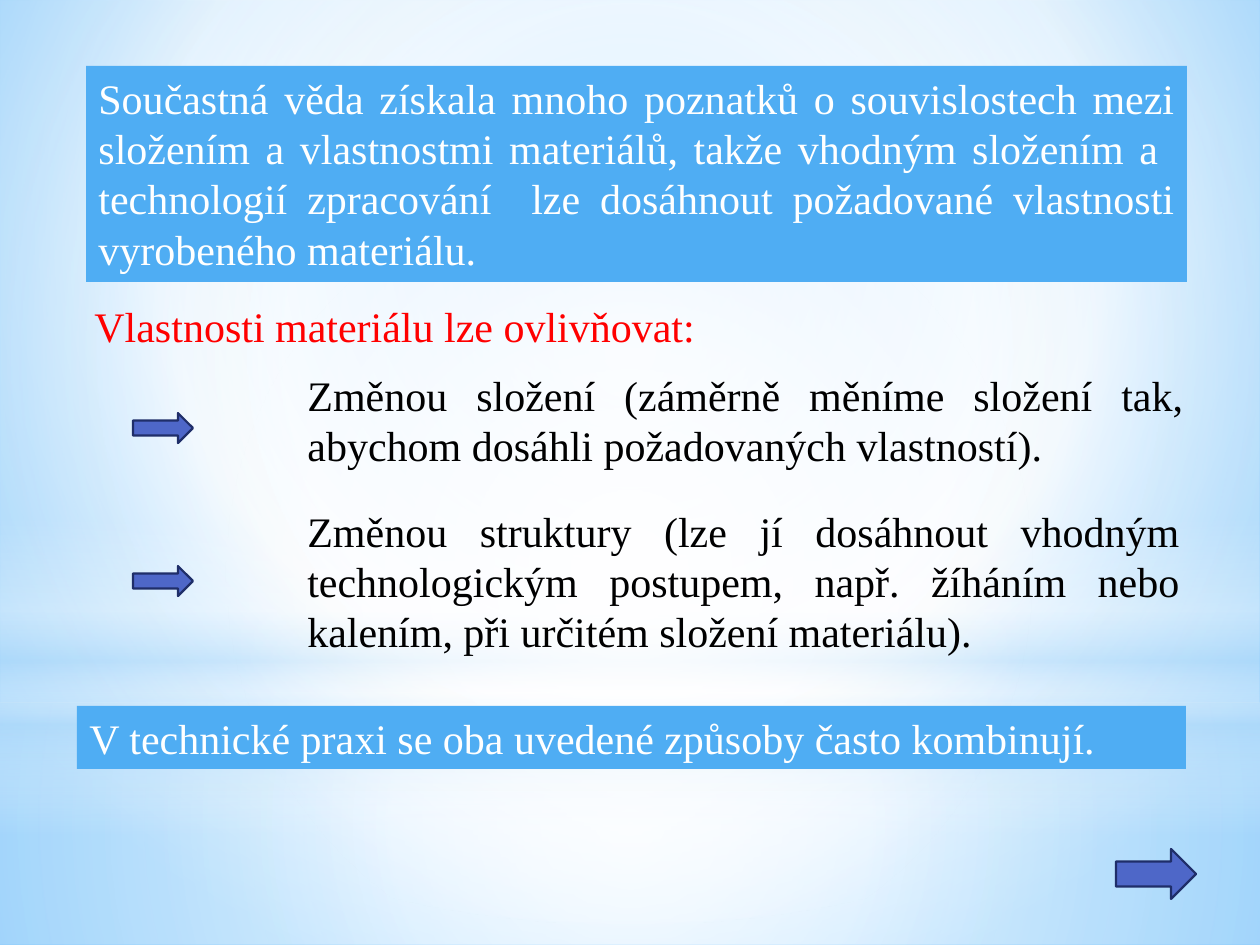
from lxml import etree
from pptx import Presentation
from pptx.dml.color import RGBColor
from pptx.enum.shapes import MSO_SHAPE
from pptx.enum.text import PP_ALIGN
from pptx.oxml.ns import qn
from pptx.util import Emu, Pt

PX = 914400 / 126
SLIDE_WIDTH, SLIDE_HEIGHT = 1260, 945
FONT = "Times New Roman"
RECTANGLE, OVAL = MSO_SHAPE.RECTANGLE, MSO_SHAPE.OVAL
ARROW = MSO_SHAPE.RIGHT_ARROW
LEFT, JUSTIFY = PP_ALIGN.LEFT, PP_ALIGN.JUSTIFY
COLORS = {
    "white": "FFFFFF", "black": "000000", "red": "FF0000",
    "banner": "4FADF3", "arrow": "4E67C8", "arrow_line": "1F2E69",
    "sky": "9ED5FF", "deep_sky": "5BB9FF", "haze": "B4DCFA",
}
CENTER = (50, 50, 50, 50)
# Gradient stops are (position %, color, opacity %).
SKY_STOPS = [(0, "sky", 100), (60, "white", 100), (100, "deep_sky", 100)]
HAZE_LAYERS = [
    (RECTANGLE, (0, 703, 1260, 242),
     [(0, "white", 91), (37, "white", 76), (100, "haze", 79)], CENTER),
    (RECTANGLE, (0, 0, 1260, 703),
     [(0, "white", 89), (48, "white", 62), (100, "haze", 79)], CENTER),
    (RECTANGLE, (0, 519, 1260, 315),
     [(0, "white", 0), (29, "white", 30), (45, "haze", 40),
      (55, "white", 26), (65, "haze", 60), (100, "white", 0)], None),
    (OVAL, (0, 221, 1260, 703), [(0, "white", 100), (56, "white", 0)], CENTER),
]
INTRO = ("Součastná věda získala mnoho poznatků o souvislostech mezi složením "
         "a vlastnostmi materiálů, takže vhodným složením a  technologií "
         "zpracování  lze dosáhnout požadované vlastnosti vyrobeného materiálu.")
HEADING = "Vlastnosti materiálu lze ovlivňovat:"
METHODS = [
    ((133, 363, 1063, 115), 50,
     "Změnou složení (záměrně měníme složení tak, abychom dosáhli "
     "požadovaných vlastností)."),
    ((133, 499, 1059, 165), 67,
     "Změnou struktury (lze jí dosáhnout vhodným technologickým postupem, "
     "např. žíháním nebo kalením, při určitém složení materiálu)."),
]
CONCLUSION = "V technické praxi se oba uvedené způsoby často kombinují."


def emu(box):
    return [Emu(round(length * PX)) for length in box]


def rgb(name):
    return RGBColor.from_string(COLORS[name])


def gradient(stops, focus):
    """Return a circular gradient around focus, or a vertical one without it."""
    fill = etree.Element(qn("a:gradFill"), rotWithShape="1")
    stop_list = etree.SubElement(fill, qn("a:gsLst"))
    for position, color, opacity in stops:
        stop = etree.SubElement(stop_list, qn("a:gs"), pos=str(position * 1000))
        value = etree.SubElement(stop, qn("a:srgbClr"), val=COLORS[color])
        if opacity < 100:
            etree.SubElement(value, qn("a:alpha"), val=str(opacity * 1000))
    if focus:
        circle = etree.SubElement(fill, qn("a:path"), path="circle")
        sides = {side: str(part * 1000) for side, part in zip("ltrb", focus)}
        etree.SubElement(circle, qn("a:fillToRect"), **sides)
    else:
        etree.SubElement(fill, qn("a:lin"), ang="5400000", scaled="0")
    return fill


def add_shape(slide, kind, box, color, line=None):
    shape = slide.shapes.add_shape(kind, *emu(box))
    shape.shadow.inherit = False
    shape.fill.solid()
    shape.fill.fore_color.rgb = rgb(color)
    if line:
        shape.line.color.rgb = rgb(line)
        shape.line.width = Pt(1.25)
    else:
        shape.line.fill.background()
    return shape


def add_backdrop(slide):
    slide.background.fill.solid()
    solid = slide.element.find(".//" + qn("p:bgPr")).find(qn("a:solidFill"))
    solid.getparent().replace(solid, gradient(SKY_STOPS, (20, 10, 20, 60)))
    for kind, box, stops, focus in HAZE_LAYERS:
        shape = add_shape(slide, kind, box, "white")
        solid = shape.element.spPr.find(qn("a:solidFill"))
        solid.getparent().replace(solid, gradient(stops, focus))


def add_text(slide, box, text, color, alignment=LEFT, fill=None):
    shape = slide.shapes.add_textbox(*emu(box))
    if fill:
        shape.fill.solid()
        shape.fill.fore_color.rgb = rgb(fill)
    shape.text_frame.word_wrap = True
    paragraph = shape.text_frame.paragraphs[0]
    paragraph.alignment = alignment
    run = paragraph.add_run()
    run.text = text
    for name, value in {"name": FONT, "size": Pt(24)}.items():
        setattr(run.font, name, value)
    run.font.color.rgb = rgb(color)


def add_arrow(slide, box):
    add_shape(slide, ARROW, box, "arrow", "arrow_line")


def add_method(slide, box, arrow_offset, text):
    """Place an arrow at the left of the box and its text at the right."""
    left, top, width, height = box
    indent = 162
    add_arrow(slide, (left, top + arrow_offset, 60, 30))
    add_text(slide, (left + indent, top, width - indent, height),
             text, "black", JUSTIFY)


def main():
    presentation = Presentation()
    presentation.slide_width, presentation.slide_height = emu(
        (SLIDE_WIDTH, SLIDE_HEIGHT))
    slide = presentation.slides.add_slide(presentation.slide_layouts[6])
    add_backdrop(slide)
    add_text(slide, (86, 66, 1101, 216), INTRO, "white", JUSTIFY, "banner")
    add_text(slide, (82, 294, 1101, 63), HEADING, "red")
    for box, arrow_offset, text in METHODS:
        add_method(slide, box, arrow_offset, text)
    add_text(slide, (77, 706, 1109, 63), CONCLUSION, "white", fill="banner")
    add_arrow(slide, (1116, 849, 80, 50))
    presentation.save("out.pptx")


if __name__ == "__main__":
    main()
